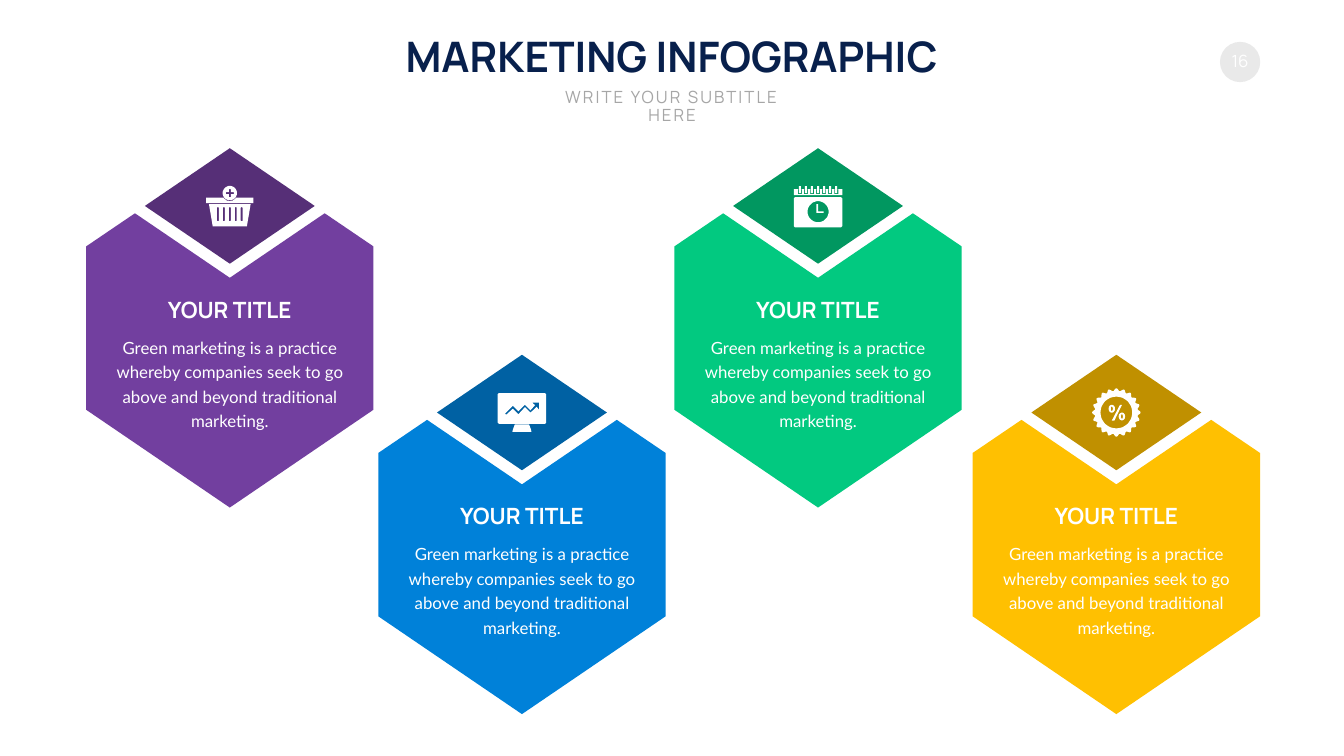
from dataclasses import dataclass
from math import cos, pi, sin

from pptx import Presentation
from pptx.dml.color import RGBColor
from pptx.enum.shapes import MSO_SHAPE
from pptx.enum.text import MSO_ANCHOR, MSO_AUTO_SIZE, PP_ALIGN
from pptx.util import Cm, Pt

WHITE = RGBColor(0xFF, 0xFF, 0xFF)
NAVY = RGBColor(0x08, 0x20, 0x4C)
GREY = RGBColor(0xA6, 0xA6, 0xA6)
LIGHT_GREY = RGBColor(0xE9, 0xE9, 0xE9)
PURPLE, DARK_PURPLE = RGBColor(0x72, 0x3F, 0x9F), RGBColor(0x56, 0x2F, 0x77)
GREEN, DARK_GREEN = RGBColor(0x02, 0xC9, 0x80), RGBColor(0x01, 0x97, 0x60)
BLUE, DARK_BLUE = RGBColor(0x00, 0x81, 0xD9), RGBColor(0x00, 0x61, 0xA3)
YELLOW, DARK_YELLOW = RGBColor(0xFF, 0xC0, 0x01), RGBColor(0xC0, 0x90, 0x00)

HEADING_FONT, BODY_FONT = "Manrope", "Lato"
CARD_TITLE = "YOUR TITLE"
CARD_BODY = ("Green marketing is a practice whereby companies seek to go "
             "above and beyond traditional marketing.")
UPPER_ROW, LOWER_ROW = 7.47, 17.88
DIAMOND_WIDTH, DIAMOND_HEIGHT = 8.56, 5.82

# Outlines are in hundredths of a centimetre around a local origin.
Contour = list[tuple[float, float]]


@dataclass
class Card:
    center: float
    top: float
    color: RGBColor
    dark_color: RGBColor
    icon: list[Contour]


def rectangle(left: float, top: float, right: float, bottom: float, corner: float = 0) -> Contour:
    """Rectangle whose corners are cut by the given length."""
    if not corner:
        return [(left, top), (right, top), (right, bottom), (left, bottom)]
    return [(left + corner, top), (right - corner, top),
            (right, top + corner), (right, bottom - corner),
            (right - corner, bottom), (left + corner, bottom),
            (left, bottom - corner), (left, top + corner)]


def ellipse(x: float, y: float, radius_x: float, radius_y: float) -> Contour:
    angles = [2 * pi * step / 48 for step in range(48)]
    return [(x + radius_x * cos(angle), y + radius_y * sin(angle)) for angle in angles]


def scalloped_circle(radius: float, depth: float, lobes: int) -> Contour:
    steps = lobes * 8
    contour = []
    for step in range(steps):
        angle = 2 * pi * step / steps
        distance = radius + depth * cos(lobes * angle)
        contour.append((distance * cos(angle), distance * sin(angle)))
    return contour


def basket_icon() -> list[Contour]:
    slots = [rectangle(x - 5, 6, x + 5, 77, 3) for x in range(-60, 61, 30)]
    bucket = [(-105, -9), (105, -9), (86, 103), (-86, 103)]
    rim = [(-119, -42), (-33, -42), (-28, -37), (-15, -27), (0, -24), (15, -27),
           (28, -37), (33, -42), (119, -42), (119, -14), (-119, -14)]
    plus = [(-5, -85), (5, -85), (5, -70), (20, -70), (20, -60), (5, -60),
            (5, -45), (-5, -45), (-5, -60), (-20, -60), (-20, -70), (-5, -70)]
    return [bucket, *slots, rim, ellipse(0, -65, 36, 36), plus]


def calendar_icon() -> list[Contour]:
    hands = [(-8, -9), (0, -9), (0, 27), (28, 27), (28, 35), (-8, 35)]
    ring_centers = [30.5 * position for position in range(-3, 4)]
    notches = [rectangle(x - 10, -85, x + 10, -60) for x in ring_centers]
    rings = [rectangle(x - 5, -100, x + 5, -65) for x in ring_centers]
    return [rectangle(-122, -44, 122, 108, 6), ellipse(0, 29, 53, 53), hands,
            rectangle(-122, -85, 122, -55), *notches, *rings]


def monitor_icon() -> list[Contour]:
    stand = [(-36, 60), (36, 60), (46, 87), (48, 98), (-48, 98), (-46, 87)]
    trend_arrow = [(51, -50), (66, -37), (43, -11), (15, -39), (-18, -6),
                   (-46, -34), (-86, 6), (-79, 11), (-46, -19), (-18, 9),
                   (15, -27), (43, 1), (74, -29), (86, -14), (86, -50)]
    return [rectangle(-122, -98, 122, 57, 6), trend_arrow, stand]


def badge_icon() -> list[Contour]:
    zeros = [ellipse(x, y, *radii)
             for x, y in ((-23, -19), (28, 20)) for radii in ((16, 20), (5, 11))]
    slash = [(18, -38), (28, -38), (-10, 41), (-23, 41)]
    return [scalloped_circle(115, 7, 20), ellipse(0, 0, 80, 80), *zeros, slash]


HEXAGON = [(-478, 328), (0, 653), (478, 328), (724, 495), (724, 1318),
           (0, 1811), (-724, 1318), (-724, 495)]

CARDS = [
    Card(11.58, UPPER_ROW, PURPLE, DARK_PURPLE, basket_icon()),
    Card(41.22, UPPER_ROW, GREEN, DARK_GREEN, calendar_icon()),
    Card(26.3, LOWER_ROW, BLUE, DARK_BLUE, monitor_icon()),
    Card(56.25, LOWER_ROW, YELLOW, DARK_YELLOW, badge_icon()),
]


def paint(shape, color: RGBColor) -> None:
    shape.shadow.inherit = False
    shape.fill.solid()
    shape.fill.fore_color.rgb = color
    shape.line.fill.background()


def place(shape, left: float, top: float, width: float, height: float) -> None:
    shape.left, shape.top = Cm(left), Cm(top)
    shape.width, shape.height = Cm(width), Cm(height)


def write(shape, text: str, *, size: float, color: RGBColor, font: str = HEADING_FONT,
          bold: bool = False, wrap: bool = True, grow: bool = True,
          anchor: MSO_ANCHOR = MSO_ANCHOR.TOP, line_spacing=0.9,
          space_before: float = 0, letter_spacing: float = 0) -> None:
    frame = shape.text_frame
    frame.word_wrap = wrap
    frame.auto_size = MSO_AUTO_SIZE.SHAPE_TO_FIT_TEXT if grow else MSO_AUTO_SIZE.NONE
    frame.vertical_anchor = anchor
    paragraph = frame.paragraphs[0]
    paragraph.alignment = PP_ALIGN.CENTER
    paragraph.line_spacing = line_spacing
    paragraph.space_before = Pt(space_before)
    run = paragraph.add_run()
    run.text = text
    run.font.name, run.font.size, run.font.bold = font, Pt(size), bold
    run.font.color.rgb = color
    if letter_spacing:
        run._r.get_or_add_rPr().set("spc", str(round(letter_spacing * 100)))


def draw_outline(slide, contours: list[Contour], x: float, y: float, color: RGBColor) -> None:
    """Draw the contours as one shape, with their local origin at x, y."""
    builder = slide.shapes.build_freeform(*contours[0][0], scale=Cm(0.01))
    for index, contour in enumerate(contours):
        if index:
            builder.move_to(*contour[0])
        builder.add_line_segments(contour[1:], close=True)
    paint(builder.convert_to_shape(Cm(x), Cm(y)), color)


def add_text_box(slide, center: float, top: float, width: float, height: float):
    return slide.shapes.add_textbox(Cm(center - width / 2), Cm(top), Cm(width), Cm(height))


def draw_card(slide, card: Card) -> None:
    draw_outline(slide, [HEXAGON], card.center, card.top, card.color)
    diamond = slide.shapes.add_shape(
        MSO_SHAPE.DIAMOND, Cm(card.center - DIAMOND_WIDTH / 2), Cm(card.top),
        Cm(DIAMOND_WIDTH), Cm(DIAMOND_HEIGHT))
    paint(diamond, card.dark_color)
    draw_outline(slide, card.icon, card.center, card.top + DIAMOND_HEIGHT / 2, WHITE)
    write(add_text_box(slide, card.center, card.top + 9.19, 12.47, 5.11), CARD_BODY,
          size=24, color=WHITE, font=BODY_FONT, line_spacing=Pt(35), space_before=4.8)
    write(add_text_box(slide, card.center, card.top + 7.39, 6.81, 1.63), CARD_TITLE,
          size=32, color=WHITE, bold=True, wrap=False, anchor=MSO_ANCHOR.MIDDLE)


def draw_header(slide) -> None:
    title, subtitle = slide.placeholders
    place(title, 19.58, 1.7, 28.52, 2.82)
    write(title, "MARKETING INFOGRAPHIC", size=60, color=NAVY, bold=True, wrap=False)
    place(subtitle, 26.97, 4.37, 13.79, 1.27)
    write(subtitle, "WRITE YOUR SUBTITLE HERE", size=24, color=GREY, letter_spacing=3)

    page_number = slide.shapes.add_shape(
        MSO_SHAPE.OVAL, Cm(61.47), Cm(2.11), Cm(2.03), Cm(2.03))
    paint(page_number, LIGHT_GREY)
    frame = page_number.text_frame
    frame.margin_left = frame.margin_right = frame.margin_top = frame.margin_bottom = 0
    write(page_number, "16", size=24, color=WHITE, wrap=False, grow=False,
          anchor=MSO_ANCHOR.MIDDLE)


def main() -> None:
    presentation = Presentation()
    presentation.slide_width, presentation.slide_height = Cm(67.72), Cm(38.1)
    slide = presentation.slides.add_slide(presentation.slide_layouts[0])
    draw_header(slide)
    for card in CARDS:
        draw_card(slide, card)
    presentation.save("out.pptx")


if __name__ == "__main__":
    main()
